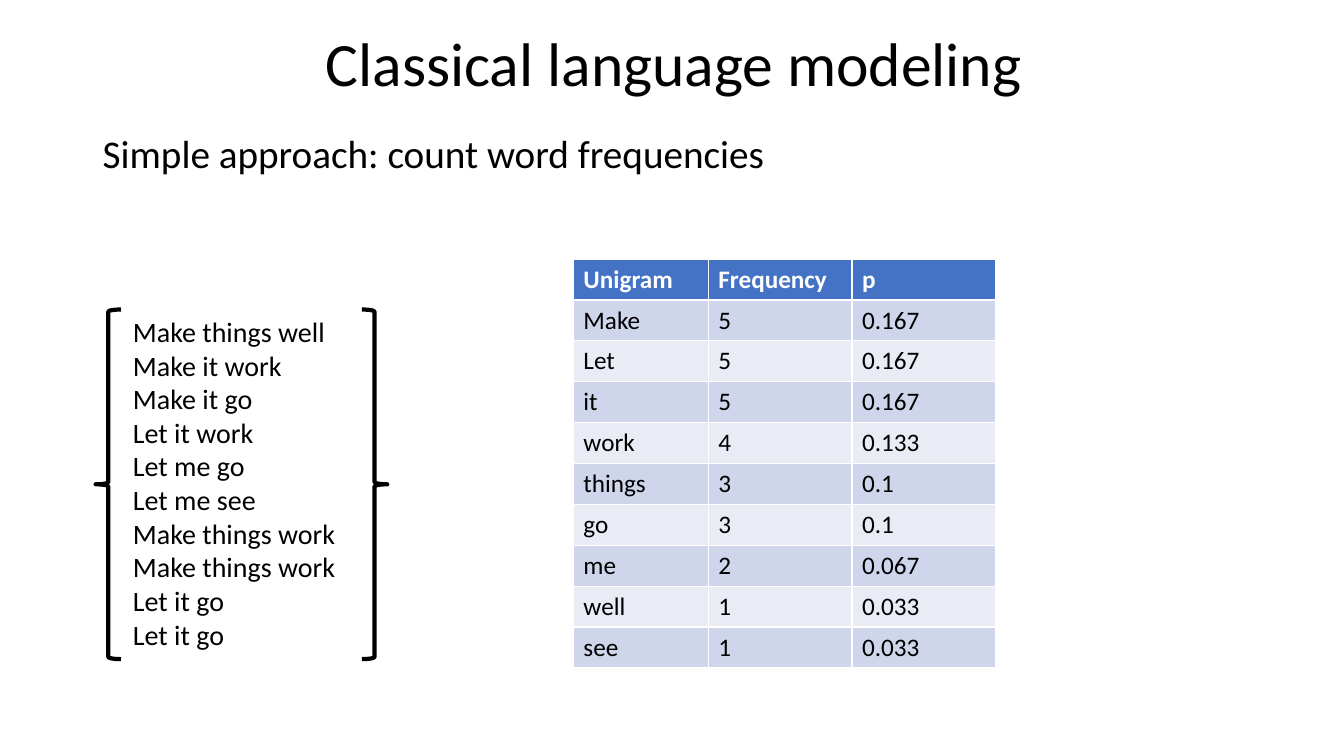
"""Builds a slide on unigram counts in classical language modeling."""
from dataclasses import dataclass

from pptx import Presentation
from pptx.dml.color import RGBColor
from pptx.enum.shapes import MSO_SHAPE
from pptx.enum.text import MSO_ANCHOR, MSO_AUTO_SIZE, PP_ALIGN
from pptx.util import Cm, Pt

LEFT_BRACE, RIGHT_BRACE = MSO_SHAPE.LEFT_BRACE, MSO_SHAPE.RIGHT_BRACE
MIDDLE, CENTER = MSO_ANCHOR.MIDDLE, PP_ALIGN.CENTER
NO_FIT, GROW = MSO_AUTO_SIZE.NONE, MSO_AUTO_SIZE.SHAPE_TO_FIT_TEXT

TITLE = "Classical language modeling"
APPROACH = "Simple approach: count word frequencies"
SENTENCES = [
    "Make things well",
    "Make it work",
    "Make it go",
    "Let it work",
    "Let me go",
    "Let me see",
    "Make things work",
    "Make things work",
    "Let it go",
    "Let it go",
]
UNIGRAMS = [
    ("Unigram", "Frequency", "p"),
    ("Make", "5", "0.167"),
    ("Let", "5", "0.167"),
    ("it", "5", "0.167"),
    ("work", "4", "0.133"),
    ("things", "3", "0.1"),
    ("go", "3", "0.1"),
    ("me", "2", "0.067"),
    ("well", "1", "0.033"),
    ("see", "1", "0.033"),
]


@dataclass(frozen=True)
class Theme:
    """Holds the colours and type sizes of the slide."""
    font: str = "Calibri"
    ink: RGBColor = RGBColor(0, 0, 0)
    header_ink: RGBColor = RGBColor(0xFF, 0xFF, 0xFF)
    header_fill: RGBColor = RGBColor(0x44, 0x72, 0xC4)
    bands: tuple = (RGBColor(0xE9, 0xEB, 0xF5), RGBColor(0xCF, 0xD5, 0xEA))
    title_size: int = 44
    approach_size: int = 28
    sentence_size: int = 20
    table_size: int = 18
    brace_width: int = 3


THEME = Theme()
SLIDE_WIDTH, SLIDE_HEIGHT = Cm(33.87), Cm(19.05)
TITLE_BOX = Cm(0.05), Cm(0.05), SLIDE_WIDTH, Cm(3.23)
APPROACH_BOX = Cm(2.34), Cm(3.28), Cm(29.21), Cm(14.71)
TABLE_LEFT, TABLE_TOP = Cm(14.45), Cm(6.53)
COLUMN_WIDTHS = Cm(3.4), Cm(3.62), Cm(3.62)
ROW_HEIGHT = Cm(1.03)
CORPUS_TOP, CORPUS_HEIGHT = Cm(7.8), Cm(8.81)
SENTENCES_LEFT, SENTENCES_WIDTH = Cm(3.1), Cm(5.66)
BRACE_WIDTH = Cm(0.64)
BRACES = [(RIGHT_BRACE, Cm(9.12)), (LEFT_BRACE, Cm(2.41))]


def format_text(text_frame, size, color=THEME.ink, bold=False):
    """Applies the theme font to every run."""
    for paragraph in text_frame.paragraphs:
        for run in paragraph.runs:
            run.font.name = THEME.font
            run.font.size = Pt(size)
            run.font.bold = bold
            run.font.color.rgb = color


def add_title(slide):
    """Fills and places the title placeholder."""
    title = slide.shapes.title
    title.left, title.top, title.width, title.height = TITLE_BOX
    text_frame = title.text_frame
    text_frame.text = TITLE
    text_frame.auto_size = NO_FIT
    text_frame.vertical_anchor = MIDDLE
    text_frame.paragraphs[0].alignment = CENTER
    text_frame.paragraphs[0].line_spacing = 0.9
    format_text(text_frame, THEME.title_size)


def add_approach(slide):
    """Adds the line below the title."""
    text_frame = slide.shapes.add_textbox(*APPROACH_BOX).text_frame
    text_frame.word_wrap = True
    text_frame.text = APPROACH
    text_frame.paragraphs[0].line_spacing = 0.9
    text_frame.paragraphs[0].space_before = Pt(10)
    format_text(text_frame, THEME.approach_size)


def add_unigram_table(slide):
    """Adds the table of word counts with banded rows."""
    table = slide.shapes.add_table(
        len(UNIGRAMS), len(COLUMN_WIDTHS), TABLE_LEFT, TABLE_TOP,
        sum(COLUMN_WIDTHS), ROW_HEIGHT * len(UNIGRAMS)).table
    for column, width in zip(table.columns, COLUMN_WIDTHS):
        column.width = width
    for row_index, values in enumerate(UNIGRAMS):
        header = row_index == 0
        fill = THEME.header_fill if header else THEME.bands[row_index % 2]
        color = THEME.header_ink if header else THEME.ink
        for column_index, value in enumerate(values):
            cell = table.cell(row_index, column_index)
            cell.text_frame.text = value
            cell.fill.solid()
            cell.fill.fore_color.rgb = fill
            format_text(cell.text_frame, THEME.table_size, color, header)


def add_corpus(slide):
    """Adds the sentences between two braces."""
    text_frame = slide.shapes.add_textbox(
        SENTENCES_LEFT, CORPUS_TOP, SENTENCES_WIDTH, CORPUS_HEIGHT).text_frame
    text_frame.word_wrap = False
    text_frame.auto_size = GROW
    text_frame.text = "\n".join(SENTENCES)
    format_text(text_frame, THEME.sentence_size)
    for brace_type, left in BRACES:
        brace = slide.shapes.add_shape(
            brace_type, left, CORPUS_TOP, BRACE_WIDTH, CORPUS_HEIGHT)
        brace.shadow.inherit = False
        brace.fill.background()
        brace.line.color.rgb = THEME.ink
        brace.line.width = Pt(THEME.brace_width)


def main():
    """Builds and saves the presentation."""
    presentation = Presentation()
    presentation.slide_width = SLIDE_WIDTH
    presentation.slide_height = SLIDE_HEIGHT
    title_only = presentation.slide_layouts.get_by_name("Title Only")
    slide = presentation.slides.add_slide(title_only)
    add_title(slide)
    add_approach(slide)
    add_unigram_table(slide)
    add_corpus(slide)
    presentation.save("out.pptx")


if __name__ == "__main__":
    main()
